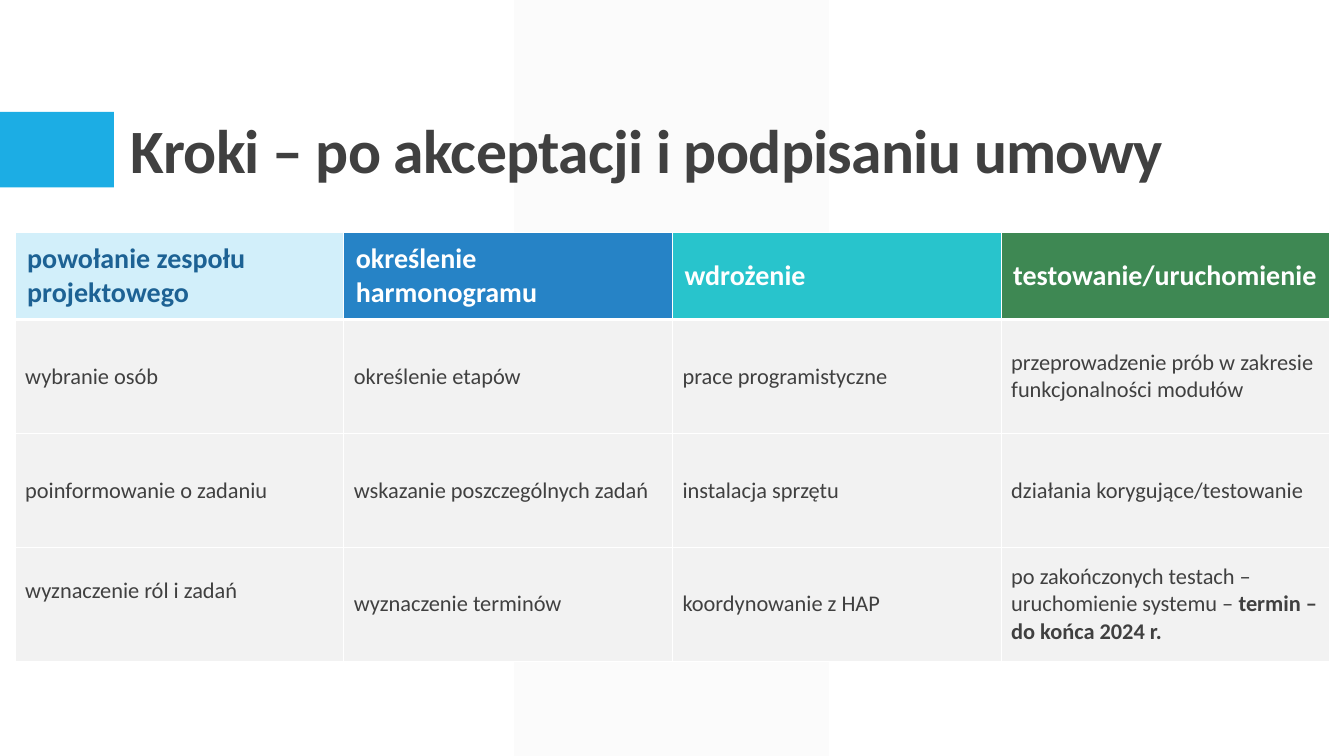
from lxml.etree import SubElement
from pptx import Presentation
from pptx.dml.color import RGBColor
from pptx.enum.shapes import MSO_SHAPE as Preset
from pptx.enum.text import MSO_ANCHOR as Anchor
from pptx.oxml.ns import qn
from pptx.util import Emu, Pt

EMU_PER_PX = 9144  # 100 px to the inch
COLORS = {
    "white": "FFFFFF", "band": "F2F2F2", "accent": "1CADE4", "text": "404040",
    "pale": "D2EFFA", "navy": "1D6294", "blue": "2683C6", "teal": "28C4CC",
    "green": "3E8853",
}
FORMATS = {
    "title": {"size": Pt(44), "bold": True},
    "header": {"size": Pt(20), "bold": True},
    "body": {"size": Pt(16), "bold": False},
    "strong": {"size": Pt(16), "bold": True},
}
HEADERS = [
    ("powołanie zespołu projektowego", "pale", "navy"),
    ("określenie harmonogramu", "blue", "white"),
    ("wdrożenie", "teal", "white"),
    ("testowanie/uruchomienie", "green", "white"),
]
STEPS = [
    ["wybranie osób", "określenie etapów", "prace programistyczne",
     "przeprowadzenie prób w zakresie funkcjonalności modułów"],
    ["poinformowanie o zadaniu", "wskazanie poszczególnych zadań",
     "instalacja sprzętu", "działania korygujące/testowanie"],
    ["wyznaczenie ról i zadań", "wyznaczenie terminów", "koordynowanie z HAP",
     "po zakończonych testach – uruchomienie systemu – "],
]
DEADLINE = "termin – do końca 2024 r."
HEADER_INSETS = (12, 6, 12, 6)
BODY_INSETS = (10, 5, 10, 5)
RAISED_INSETS = (10, 5, 10, 31)


def px(length):
    return Emu(length * EMU_PER_PX)


def rgb(name):
    return RGBColor.from_string(COLORS[name])


class SlideBuilder:
    def __init__(self, deck, font="Calibri"):
        self.page = deck.slides.add_slide(deck.slide_layouts[6])
        self.font = font

    def span(self, para, text, style, color):
        span = para.add_run()
        span.text = text
        span.font.name = self.font
        span.font.color.rgb = rgb(color)
        for name, value in FORMATS[style].items():
            setattr(span.font, name, value)
        return span

    def block(self, preset, bounds, color, opacity=100):
        shape = self.page.shapes.add_shape(preset, *map(px, bounds))
        shape.shadow.inherit = False
        shape.fill.solid()
        shape.fill.fore_color.rgb = rgb(color)
        shape.line.fill.background()
        if opacity < 100:
            tint = shape.fill._xPr.find(f".//{qn('a:srgbClr')}")
            SubElement(tint, qn("a:alpha"), val=str(opacity * 1000))
        return shape

    def title(self, bounds, text):
        box = self.page.shapes.add_textbox(*map(px, bounds))
        frame = box.text_frame
        frame.word_wrap = True
        frame.vertical_anchor = Anchor.BOTTOM
        para = frame.paragraphs[0]
        para.line_spacing = 0.9
        span = self.span(para, text, "title", "text")
        span.font._element.set("spc", "-50")

    def table(self, left, top, column_width, row_heights, columns):
        width = column_width * columns
        frame = self.page.shapes.add_table(
            len(row_heights), columns,
            *map(px, (left, top, width, sum(row_heights))))
        table = frame.table
        table.first_row = table.horz_banding = False
        for column in table.columns:
            column.width = px(column_width)
        for row, height in zip(table.rows, row_heights):
            row.height = px(height)
        return table

    def cell(self, cell, text, style, color, fill, insets, bottom_line=1):
        cell.vertical_anchor = Anchor.MIDDLE
        for side, inset in zip(("left", "top", "right", "bottom"), insets):
            setattr(cell, f"margin_{side}", px(inset))
        self.borders(cell, {"L": 1, "R": 1, "T": 1, "B": bottom_line})
        cell.fill.solid()
        cell.fill.fore_color.rgb = rgb(fill)
        para = cell.text_frame.paragraphs[0]
        self.span(para, text, style, color)
        return para

    def borders(self, cell, widths):
        """Draw white cell edges; must come before the cell's fill."""
        properties = cell._tc.get_or_add_tcPr()
        for side, width in widths.items():
            line = SubElement(properties, qn(f"a:ln{side}"), w=str(Pt(width)))
            paint = SubElement(line, qn("a:solidFill"))
            SubElement(paint, qn("a:srgbClr"), val=COLORS["white"])


def main():
    deck = Presentation()
    deck.slide_width, deck.slide_height = px(1333), px(750)
    slide = SlideBuilder(deck)
    band = slide.block(Preset.PARALLELOGRAM, (510, 0, 312, 750), "band", 30)
    band.adjustments[0] = 0
    slide.block(Preset.RECTANGLE, (0, 111, 113, 75), "accent")
    slide.title((120, 31, 1100, 159), "Kroki – po akceptacji i podpisaniu umowy")

    heights = [86] + [113] * len(STEPS)
    table = slide.table(15, 231, 326, heights, len(HEADERS))
    for column, (text, fill, color) in enumerate(HEADERS):
        slide.cell(table.cell(0, column), text, "header", color, fill,
                   HEADER_INSETS, bottom_line=3)
    for row, texts in enumerate(STEPS, start=1):
        for column, text in enumerate(texts):
            raised = row == len(STEPS) and column == 0
            para = slide.cell(table.cell(row, column), text, "body", "text",
                              "band", RAISED_INSETS if raised else BODY_INSETS)
    slide.span(para, DEADLINE, "strong", "text")
    deck.save("out.pptx")


if __name__ == "__main__":
    main()
